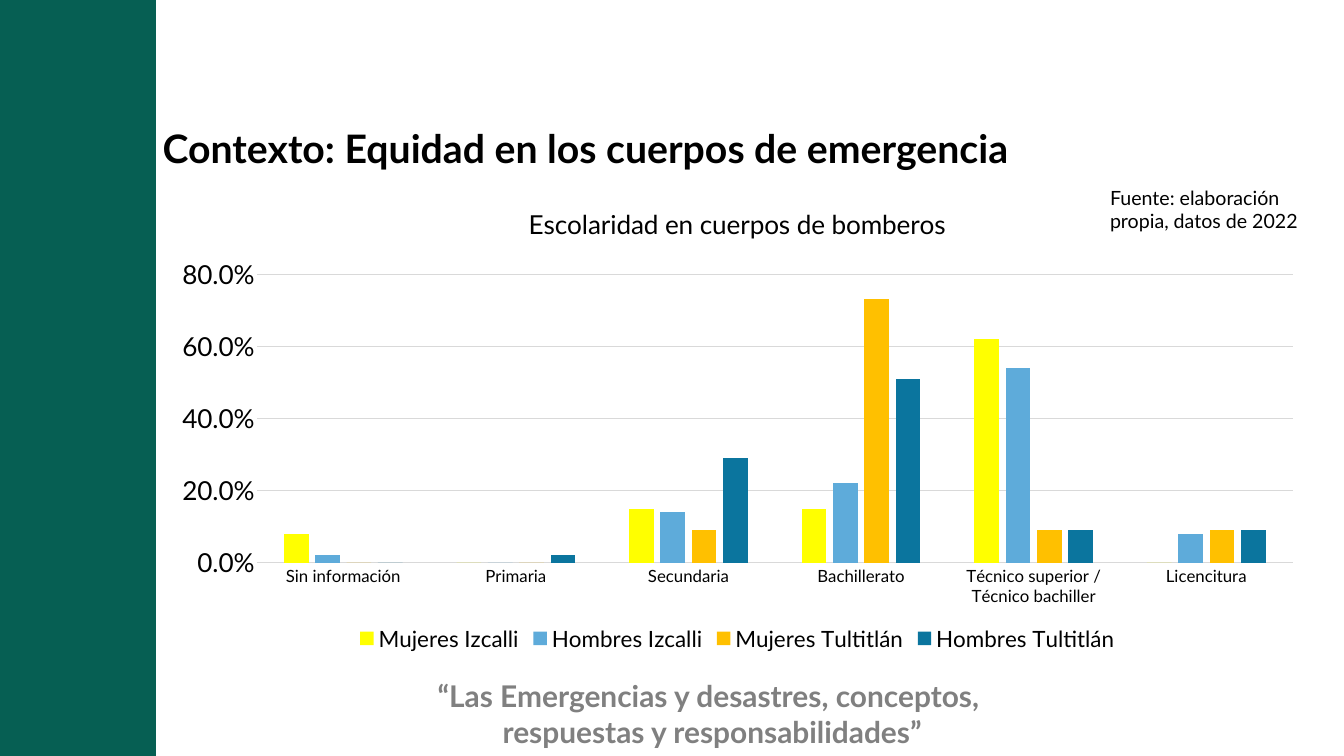
"""Build the slide on schooling in fire brigades, with a clustered column chart."""
from lxml.etree import SubElement
from pptx import Presentation
from pptx.chart.data import CategoryChartData
from pptx.dml.color import RGBColor
from pptx.enum.chart import XL_CHART_TYPE as CT, XL_LEGEND_POSITION as LP, XL_TICK_MARK as TM
from pptx.enum.shapes import MSO_SHAPE as SHAPE
from pptx.enum.text import MSO_ANCHOR as ANCHOR, PP_ALIGN as ALIGN
from pptx.oxml.ns import qn
from pptx.util import Inches, Pt

GREEN = RGBColor(0x06, 0x5F, 0x53)
GREY = RGBColor(0x80, 0x80, 0x80)
GRID = RGBColor(0xD9, 0xD9, 0xD9)
BLACK = RGBColor(0, 0, 0)
YELLOW = RGBColor(0xFF, 0xFF, 0)
SKY = RGBColor(0x5E, 0xAB, 0xDA)
AMBER = RGBColor(0xFF, 0xC0, 0)
TEAL = RGBColor(0x0B, 0x75, 0x9E)
FONT = "Lato"
WIDTH, HEIGHT, BAND = 20, 11.25, 2.32

TITLE = "Contexto: Equidad en los cuerpos de emergencia"
SOURCE = "Fuente: elaboración propia, datos de 2022"
MOTTO = ["“Las Emergencias y desastres, conceptos, ", "respuestas y responsabilidades”"]
CHART_TITLE = "Escolaridad en cuerpos de bomberos"
LEVELS = ["Sin información", "Primaria", "Secundaria", "Bachillerato",
          "Técnico superior / Técnico bachiller", "Licencitura"]
SERIES = [
    ("Mujeres Izcalli", YELLOW, [0.08, 0, 0.15, 0.15, 0.62, 0]),
    ("Hombres Izcalli", SKY, [0.02, 0, 0.14, 0.22, 0.54, 0.08]),
    ("Mujeres Tultitlán", AMBER, [0, 0, 0.09, 0.73, 0.09, 0.09]),
    ("Hombres Tultitlán", TEAL, [0, 0.02, 0.29, 0.51, 0.09, 0.09]),
]
PLOT = {"x": 0.085, "y": 0.185, "w": 0.895, "h": 0.615}


def box(*lengths):
    return [Inches(v) for v in lengths]


def style(font, size, color=BLACK, bold=False):
    for key, value in {"name": FONT, "size": Pt(size), "bold": bold}.items():
        setattr(font, key, value)
    font.color.rgb = color


def write(tf, lines, size, color=BLACK, bold=False, align=ALIGN.LEFT):
    tf.word_wrap = True
    for i, line in enumerate(lines):
        p = tf.add_paragraph() if i else tf.paragraphs[0]
        p.alignment = align
        r = p.add_run()
        r.text = line
        style(r.font, size, color, bold)


def rule(line):
    line.color.rgb = GRID
    line.width = Pt(0.75)


def place_plot(chart):
    area = chart._chartSpace.chart.plotArea
    layout = area.find(qn("c:layout"))
    if layout is None:
        layout = SubElement(area, qn("c:layout"))
        area.insert(0, layout)
    manual = SubElement(layout, qn("c:manualLayout"))
    values = {"layoutTarget": "inner", "xMode": "edge", "yMode": "edge", **PLOT}
    for tag, value in values.items():
        SubElement(manual, qn(f"c:{tag}")).set("val", str(value))


def add_schooling_chart(s):
    data = CategoryChartData(number_format="0.0%")
    data.categories = LEVELS
    for name, _, values in SERIES:
        data.add_series(name, values)
    chart = s.shapes.add_chart(CT.COLUMN_CLUSTERED, *box(2.36, 2.79, 17.22, 6.98), data).chart
    style(chart.font, 24)
    chart.has_title = True
    write(chart.chart_title.text_frame, [CHART_TITLE], 28, align=ALIGN.CENTER)
    chart.chart_title.include_in_layout = False
    chart.has_legend = True
    chart.legend.position = LP.BOTTOM
    chart.legend.include_in_layout = False
    style(chart.legend.font, 24)

    plot = chart.plots[0]
    for key, value in {"gap_width": 219, "overlap": -27, "vary_by_categories": False}.items():
        setattr(plot, key, value)
    for series, (_, color, _) in zip(plot.series, SERIES):
        series.format.fill.solid()
        series.format.fill.fore_color.rgb = color

    cat, val = chart.category_axis, chart.value_axis
    for axis, size in ((cat, 18), (val, 28)):
        axis.major_tick_mark = axis.minor_tick_mark = TM.NONE
        style(axis.tick_labels.font, size)
    rule(cat.format.line)
    val.format.line.fill.background()
    for key, value in {"minimum_scale": 0, "maximum_scale": 0.8, "major_unit": 0.2,
                       "has_major_gridlines": True}.items():
        setattr(val, key, value)
    rule(val.major_gridlines.format.line)
    val.tick_labels.number_format = "0.0%"
    val.tick_labels.number_format_is_linked = False
    place_plot(chart)


def main():
    prs = Presentation()
    prs.slide_width, prs.slide_height = box(WIDTH, HEIGHT)
    s = prs.slides.add_slide(prs.slide_layouts[5])

    band = s.shapes.add_shape(SHAPE.RECTANGLE, *box(0, 0, BAND, HEIGHT))
    band.shadow.inherit = False
    band.fill.solid()
    band.fill.fore_color.rgb = GREEN
    band.line.fill.background()

    motto = s.shapes.add_textbox(*box(6.12, 10.04, 8.96, 1.18))
    write(motto.text_frame, MOTTO, 32, GREY, True, ALIGN.CENTER)

    title = s.shapes.title
    title.left, title.top, title.width, title.height = box(BAND, 1.39, 16.31, 1.72)
    write(title.text_frame, [TITLE], 42, bold=True)
    title.text_frame.vertical_anchor = ANCHOR.MIDDLE
    title.text_frame.paragraphs[0].line_spacing = 0.9

    add_schooling_chart(s)
    source = s.shapes.add_textbox(*box(16.42, 2.71, 3.54, 0.81))
    write(source.text_frame, [SOURCE], 21)
    prs.save("out.pptx")


if __name__ == "__main__":
    main()
